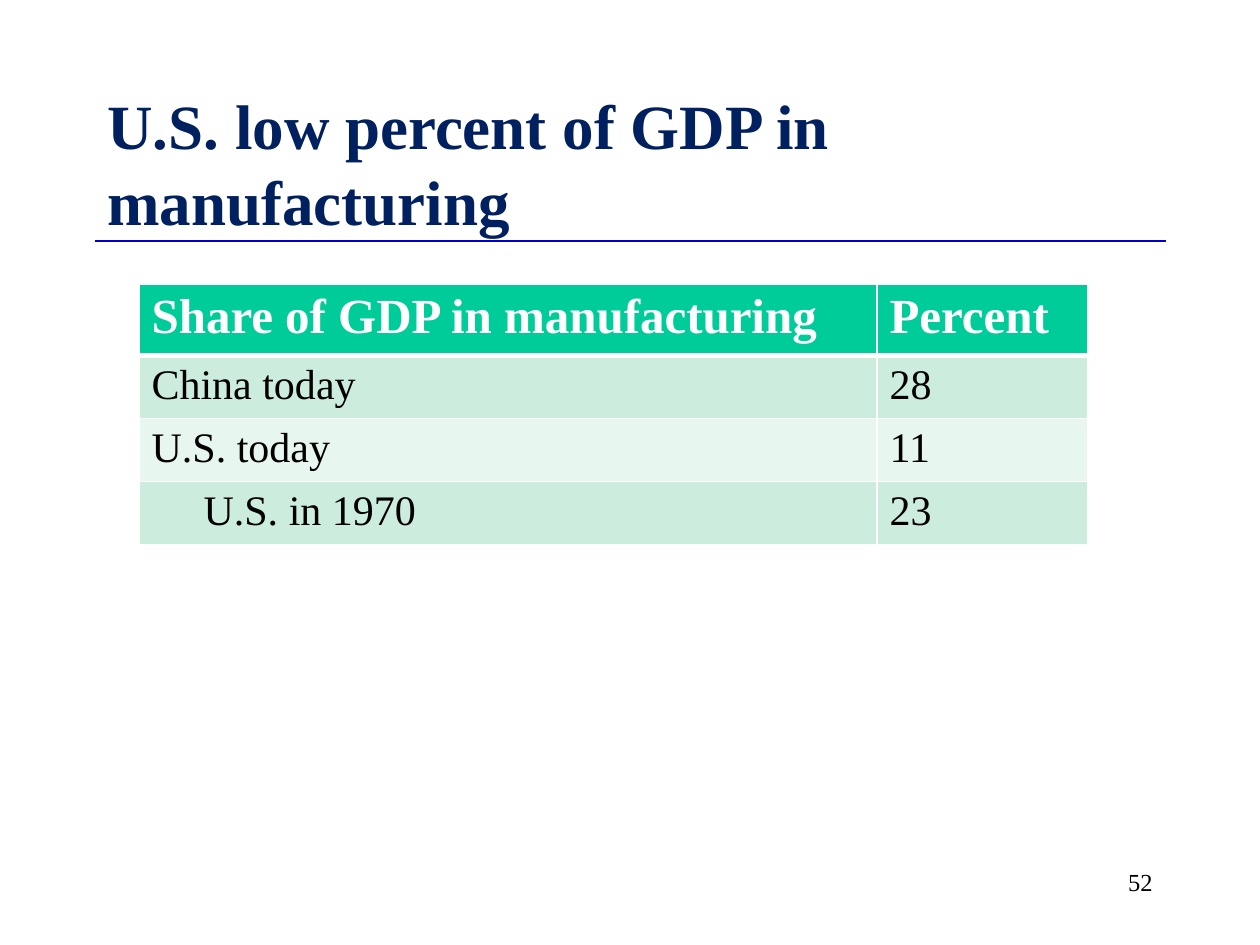
from lxml.etree import SubElement
from pptx import Presentation
from pptx.dml.color import RGBColor
from pptx.enum.shapes import MSO_CONNECTOR as CONN
from pptx.enum.text import MSO_ANCHOR as ANCHOR, PP_ALIGN as ALIGN
from pptx.oxml.ns import qn
from pptx.util import Pt

PX = 914400 / 126  # EMU in one px
FONT = "Times New Roman"
NAVY, BLUE, BLACK, WHITE = "002060", "0000CC", "000000", "FFFFFF"
HEADER, BANDS = "00CC99", ("CCECDE", "E7F6EF")
INDENT = 52

ROWS = [  # label, percent, indent level
    ("Share of GDP in manufacturing", "Percent", 0),
    ("China today", "28", 0),
    ("U.S. today", "11", 0),
    ("U.S. in 1970", "23", 1),
]


def px(n):
    return round(n * PX)


def rgb(color):
    return RGBColor.from_string(color)


def write(tf, text, size, color=BLACK, bold=False, align=ALIGN.LEFT):
    p = tf.paragraphs[0]
    p.alignment = align
    r = p.add_run()
    r.text = text
    r.font.name, r.font.size, r.font.bold = FONT, Pt(size), bold
    r.font.color.rgb = rgb(color)


def add_text(s, x, y, w, h, text, anchor=ANCHOR.TOP, **fmt):
    tf = s.shapes.add_textbox(px(x), px(y), px(w), px(h)).text_frame
    tf.word_wrap = True
    tf.vertical_anchor = anchor
    write(tf, text, **fmt)


def add_title(s, x, y, w, h, text):
    # Rule along the bottom of the title
    rule = s.shapes.add_connector(CONN.STRAIGHT, px(x), px(y + h), px(x + w), px(y + h))
    rule.line.color.rgb = rgb(BLUE)
    rule.line.width = Pt(0.75)
    SubElement(rule._element.spPr, qn("a:effectLst"))
    add_text(s, x, y, w, h, text, anchor=ANCHOR.MIDDLE, size=36, color=NAVY, bold=True)


def set_borders(cell, **widths):
    tcPr = cell._tc.get_or_add_tcPr()
    for i, (side, width) in enumerate(widths.items()):
        ln = SubElement(tcPr, qn(f"a:ln{side}"), w=str(Pt(width)))
        fill = SubElement(ln, qn("a:solidFill"))
        SubElement(fill, qn("a:srgbClr"), val=WHITE)
        tcPr.remove(ln)
        tcPr.insert(i, ln)  # borders come before the fill


def add_share_table(s, x, y, col_widths, row_h, rows):
    frame = s.shapes.add_table(len(rows), len(col_widths), px(x), px(y),
                               px(sum(col_widths)), px(row_h * len(rows)))
    table = frame.table
    for col, w in zip(table.columns, col_widths):
        col.width = px(w)
    for i, (label, percent, level) in enumerate(rows):
        table.rows[i].height = px(row_h)
        head = i == 0
        for j, text in enumerate((label, percent)):
            cell = table.cell(i, j)
            cell.fill.solid()
            cell.fill.fore_color.rgb = rgb(HEADER if head else BANDS[(i - 1) % 2])
            set_borders(cell, L=1, R=1, T=3 if i == 1 else 1, B=3 if head else 1)
            if j == 0 and level:
                cell.margin_left += px(level * INDENT)
            write(cell.text_frame, text, size=28 if head else 24,
                  color=WHITE if head else BLACK, bold=head)


def main():
    prs = Presentation()
    prs.slide_width, prs.slide_height = px(1260), px(945)
    s = prs.slides.add_slide(prs.slide_layouts[6])
    # Title
    add_title(s, 95, 84, 1071, 157, "U.S. low percent of GDP in manufacturing")
    # Table
    add_share_table(s, 139, 284, (738, 211), 63, ROWS)
    # Slide number
    add_text(s, 903, 861, 262, 63, "52", size=14, align=ALIGN.RIGHT)
    prs.save("out.pptx")


if __name__ == "__main__":
    main()
